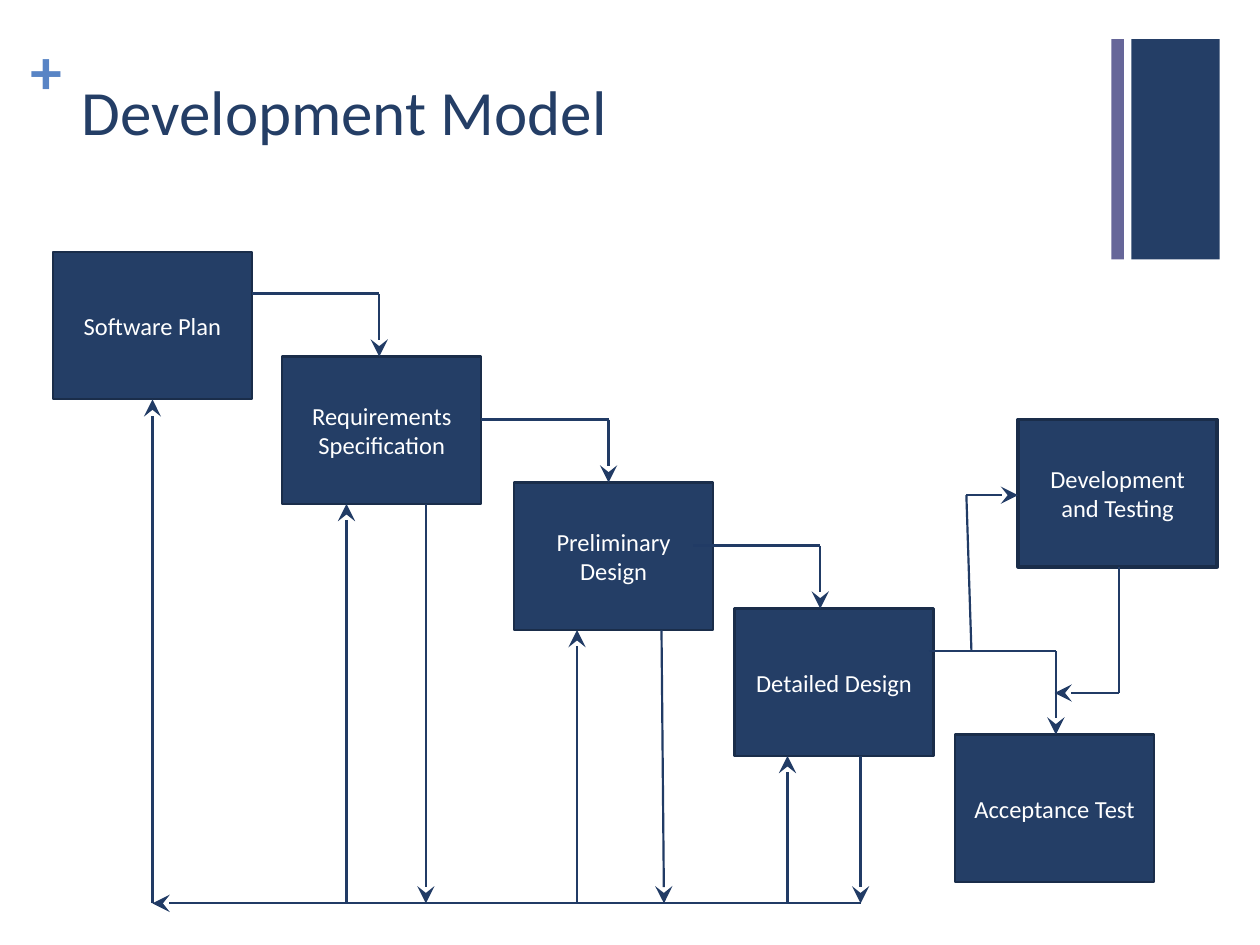
from itertools import pairwise

from lxml import etree
from pptx import Presentation
from pptx.dml.color import RGBColor
from pptx.enum.shapes import MSO_CONNECTOR, MSO_SHAPE
from pptx.enum.text import MSO_ANCHOR, PP_ALIGN
from pptx.oxml.ns import qn
from pptx.util import Inches, Pt

RECTANGLE = MSO_SHAPE.RECTANGLE
STRAIGHT = MSO_CONNECTOR.STRAIGHT
LEFT, CENTER = PP_ALIGN.LEFT, PP_ALIGN.CENTER
TOP, MIDDLE = MSO_ANCHOR.TOP, MSO_ANCHOR.MIDDLE

NAVY = RGBColor(0x24, 0x3E, 0x66)
BORDER = RGBColor(0x1A, 0x2D, 0x4A)
ARROW = RGBColor(0x21, 0x3B, 0x65)
PURPLE = RGBColor(0x66, 0x66, 0x99)
BLUE = RGBColor(0x58, 0x84, 0xC5)
WHITE = RGBColor(0xFF, 0xFF, 0xFF)
FONT = "Calibri"

TITLE = "Development Model"
BARS = [(8.98, 0.7, NAVY), (8.82, 0.1, PURPLE)]  # left, width, colour
BAR_TOP, BAR_HEIGHT = 0.31, 1.75

STAGE_WIDTH, STAGE_HEIGHT = 1.58, 1.17
STAGES = [  # text, left, top, border width
    ("Software Plan", 0.42, 2, 1.25),
    ("Requirements Specification", 2.24, 2.83, 1.25),
    ("Preliminary Design", 4.08, 3.83, 1.25),
    ("Detailed Design", 5.83, 4.83, 1.25),
    ("Acceptance Test", 7.58, 5.83, 1.25),
    ("Development and Testing", 8.08, 3.33, 2),
]

# Each flow is a list of corner points; the arrowhead is at the last one.
FORWARD_FLOWS = [
    [(2, 2.33), (3.01, 2.33), (3.01, 2.83)],
    [(3.82, 3.33), (4.83, 3.33), (4.83, 3.83)],
    [(5.5, 4.33), (6.51, 4.33), (6.51, 4.83)],
    [(7.37, 5.17), (8.38, 5.17), (8.38, 5.83)],
    [(7.71, 5.17), (7.67, 3.93), (8.08, 3.93)],
    [(8.88, 4.5), (8.88, 5.5), (8.37, 5.5)],
]
FEEDBACK_Y = 7.17
FEEDBACK_LEFT, FEEDBACK_RIGHT = 1.21, 6.83
FEEDBACK_UP = [(FEEDBACK_LEFT, 3.17), (2.75, 4), (4.58, 5), (6.25, 6)]
FEEDBACK_DOWN = [  # start x, start y, end x
    (3.38, 4, 3.38),
    (5.25, 5, 5.27),
    (FEEDBACK_RIGHT, 6, FEEDBACK_RIGHT),
]


def write_text(shape, text, size, color, bold=False, align=LEFT,
               anchor=TOP, margins=(0.1, 0.05)):
    frame = shape.text_frame
    frame.word_wrap = True
    frame.vertical_anchor = anchor
    frame.margin_left = frame.margin_right = Inches(margins[0])
    frame.margin_top = frame.margin_bottom = Inches(margins[1])
    paragraph = frame.paragraphs[0]
    paragraph.alignment = align
    run = paragraph.add_run()
    run.text = text
    run.font.name = FONT
    run.font.size = Pt(size)
    run.font.bold = bold
    run.font.color.rgb = color


def add_box(slide, left, top, width, height, fill, border_width=None):
    box = slide.shapes.add_shape(RECTANGLE, Inches(left), Inches(top),
                                 Inches(width), Inches(height))
    box.shadow.inherit = False
    box.fill.solid()
    box.fill.fore_color.rgb = fill
    if border_width is None:
        box.line.fill.background()
    else:
        box.line.color.rgb = BORDER
        box.line.width = Pt(border_width)
    return box


def add_line(slide, start, end, arrow):
    line = slide.shapes.add_connector(
        STRAIGHT, *(Inches(value) for value in (*start, *end)))
    line.line.color.rgb = ARROW
    line.line.width = Pt(1.25)
    if arrow:
        etree.SubElement(line.line._get_or_add_ln(), qn("a:tailEnd"),
                         type="stealth", w="lg", len="lg")
    etree.SubElement(line._element.spPr, qn("a:effectLst"))


def add_flow(slide, points):
    segments = list(pairwise(points))
    for number, (start, end) in enumerate(segments, 1):
        add_line(slide, start, end, arrow=number == len(segments))


def add_text_box(slide, left, top, width, height, text, **text_format):
    box = slide.shapes.add_textbox(Inches(left), Inches(top),
                                   Inches(width), Inches(height))
    write_text(box, text, **text_format)


def main():
    deck = Presentation()
    deck.slide_width, deck.slide_height = Inches(10), Inches(7.5)
    slide = deck.slides.add_slide(deck.slide_layouts[6])

    for left, width, color in BARS:
        add_box(slide, left, BAR_TOP, width, BAR_HEIGHT, color)
    add_text_box(slide, 0.24, 0.25, 0.29, 0.61, "+", size=36, color=BLUE,
                 bold=True, margins=(0, 0))
    add_text_box(slide, 0.55, 0.53, 8.26, 1.22, TITLE, size=36, color=NAVY)

    for text, left, top, border_width in STAGES:
        stage = add_box(slide, left, top, STAGE_WIDTH, STAGE_HEIGHT, NAVY,
                        border_width)
        write_text(stage, text, size=14, color=WHITE, align=CENTER,
                   anchor=MIDDLE)

    feedback = [[(FEEDBACK_RIGHT, FEEDBACK_Y), (FEEDBACK_LEFT, FEEDBACK_Y)]]
    feedback += [[(x, FEEDBACK_Y), (x, y)] for x, y in FEEDBACK_UP]
    feedback += [[(x, y), (end_x, FEEDBACK_Y)] for x, y, end_x in FEEDBACK_DOWN]
    for points in FORWARD_FLOWS + feedback:
        add_flow(slide, points)

    deck.save("out.pptx")


if __name__ == "__main__":
    main()
